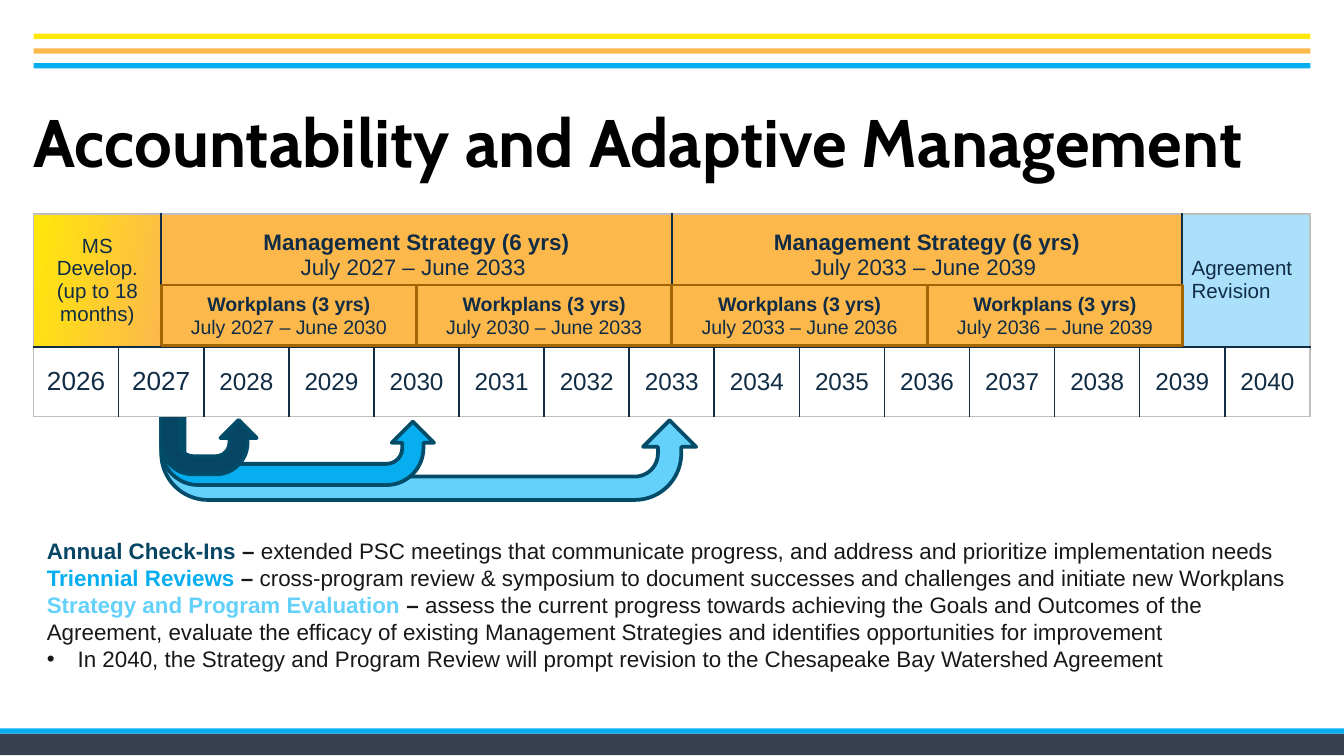
from lxml import etree
from pptx import Presentation
from pptx.dml.color import RGBColor
from pptx.enum.shapes import MSO_SHAPE
from pptx.enum.text import MSO_ANCHOR, PP_ALIGN
from pptx.oxml.ns import qn
from pptx.util import Inches, Pt

RECT, UTURN = MSO_SHAPE.RECTANGLE, MSO_SHAPE.U_TURN_ARROW
MIDDLE = MSO_ANCHOR.MIDDLE
LEFT, CENTER = PP_ALIGN.LEFT, PP_ALIGN.CENTER

HEX = {
    "yellow": "FFE809", "orange": "FDB84C", "blue": "06AEEF", "sky": "64D1FB",
    "pale": "AAE0FA", "deep": "064563", "edge": "034C69", "brown": "A36402",
    "navy": "112C45", "slate": "374151", "gray": "BFBFBF", "ink": "181818",
    "black": "000000", "white": "FFFFFF",
}

TITLE = "Accountability and Adaptive Management"
BARS = [
    (0, 5.46, 10, 0.16, "slate"), (0, 5.42, 10, 0.04, "blue"),
    (0.25, 0.25, 9.5, 0.04, "yellow"), (0.25, 0.36, 9.5, 0.04, "orange"),
    (0.25, 0.47, 9.5, 0.04, "blue"),
]
NOTES = [
    ("Annual Check-Ins", "deep", "extended PSC meetings that communicate progress, "
     "and address and prioritize implementation needs"),
    ("Triennial Reviews", "blue", "cross-program review & symposium to document "
     "successes and challenges and initiate new Workplans"),
    ("Strategy and Program Evaluation", "sky", "assess the current progress towards "
     "achieving the Goals and Outcomes of the Agreement, evaluate the efficacy of "
     "existing Management Strategies and identifies opportunities for improvement"),
]
BULLET = ("In 2040, the Strategy and Program Review will prompt revision "
          "to the Chesapeake Bay Watershed Agreement")
ARROWS = [
    (2.93, 3.98, 0.79, "sky", 0.22), (2.98, 2.03, 0.63, "blue", 0.25),
    (2.99, 0.71, 0.54, "deep", 0.25),
]
PHASES = [
    (0, 3, ["MS Develop.", "(up to 18 months)"], "yellow"),
    (3, 15, ["Management Strategy (6 yrs)", "July 2027 – June 2033 "], "orange"),
    (15, 27, ["Management Strategy (6 yrs)", "July 2033 – June 2039 "], "orange"),
    (27, 30, ["Agreement Revision"], "pale"),
]
YEARS = range(2026, 2041)
PLANS = range(2027, 2039, 3)
X, Y, WIDE = 0.25, 1.59, 9.5
ROWS = [0.99, 0.52]
HALF = WIDE / (2 * len(YEARS))
START = X + 3 * HALF


def rgb(name):
    return RGBColor.from_string(HEX[name])


def write(par, text, size, color, bold=False, face="Arial"):
    run = par.add_run()
    run.text = text
    font = run.font
    font.size, font.bold, font.name = Pt(size), bold, face
    font.color.rgb = rgb(color)


def lines(frame, items, size, align, bold=False):
    for i, text in enumerate(items):
        par = frame.add_paragraph() if i else frame.paragraphs[0]
        par.alignment = align
        write(par, text, size, "navy", bold and i == 0)


def shape(kind, x, y, w, h, fill=None, line=None, width=1):
    form = slide.shapes.add_shape(kind, Inches(x), Inches(y), Inches(w), Inches(h))
    form.shadow.inherit = False
    if fill:
        form.fill.solid()
        form.fill.fore_color.rgb = rgb(fill)
    else:
        form.fill.background()
    if line:
        form.line.color.rgb = rgb(line)
        form.line.width = Pt(width)
    else:
        form.line.fill.background()
    return form


def textbox(x, y, w, h):
    frame = slide.shapes.add_textbox(Inches(x), Inches(y), Inches(w), Inches(h)).text_frame
    frame.word_wrap = True
    return frame


def border(cell, sides):
    props = cell._tc.get_or_add_tcPr()
    for i, (side, color) in enumerate(zip("LRTB", sides)):
        line = etree.Element(qn("a:ln" + side), w=str(Pt(1)))
        solid = etree.SubElement(line, qn("a:solidFill"))
        etree.SubElement(solid, qn("a:srgbClr"), val=HEX[color])
        props.insert(i, line)


def fill_cell(row, start, end, items, color, size, align=CENTER, bold=False):
    first, last = edges.index(start), edges.index(end) - 1
    cell = grid.cell(row, first)
    if last > first:
        cell.merge(grid.cell(row, last))
    sides = ("navy" if start else "gray", "navy" if end < edges[-1] else "gray",
             "navy" if row else "gray", "gray" if row else "navy")
    for col in range(first, last + 1):
        part = grid.cell(row, col)
        part.fill.solid()
        part.fill.fore_color.rgb = rgb(color)
        border(part, sides)
    cell.vertical_anchor = MIDDLE
    cell.margin_left = cell.margin_right = Inches(0.07)
    cell.margin_top = cell.margin_bottom = Inches(0.04)
    lines(cell.text_frame, items, size, align, bold)
    return cell


deck = Presentation()
deck.slide_width = Inches(10)
deck.slide_height = deck.slide_width * 9 // 16
slide = deck.slides.add_slide(deck.slide_layouts[6])

for bar in BARS:
    shape(RECT, *bar)

head = textbox(0.25, 0.75, 9.5, 0.61)
head.margin_left = head.margin_right = head.margin_top = head.margin_bottom = 0
write(head.paragraphs[0], TITLE, 36, "black", True, "Cabin")

body = textbox(0.25, 3.95, 9.5, 1.11)
for i, (term, color, text) in enumerate(NOTES):
    par = body.add_paragraph() if i else body.paragraphs[0]
    write(par, term, 12, color, True)
    write(par, " – ", 12, "ink", True)
    write(par, text, 12, "ink")
par = body.add_paragraph()
props = par._p.get_or_add_pPr()
props.set("marL", str(Inches(0.23)))
props.set("indent", str(Inches(-0.23)))
etree.SubElement(props, qn("a:buFont"), typeface="Arial")
etree.SubElement(props, qn("a:buChar"), char="•")
write(par, BULLET, 12, "ink")

for top, w, h, color, stem in ARROWS:
    arrow = shape(UTURN, START, top, w, h, color, "edge", 2)
    arrow.adjustments[0] = stem
    arrow._element.spPr.find(qn("a:xfrm")).set("flipV", "1")

edges = sorted(set(range(0, 2 * len(YEARS) + 1, 2)) | {p[0] for p in PHASES})
grid = slide.shapes.add_table(len(ROWS), len(edges) - 1, Inches(X), Inches(Y),
                              Inches(WIDE), Inches(sum(ROWS))).table
grid.first_row = grid.horz_banding = False
for col, a, b in zip(grid.columns, edges, edges[1:]):
    col.width = Inches((b - a) * HALF)
for row, h in zip(grid.rows, ROWS):
    row.height = Inches(h)

for start, end, items, color in PHASES:
    major = color == "orange"
    cell = fill_cell(0, start, end, items, color, 12 if major else 11,
                     LEFT if color == "pale" else CENTER, major)
    if major:
        cell.margin_bottom = Inches(0.41)
    if color == "yellow":
        cell.fill.gradient()
        cell.fill.gradient_angle = 350
        for stop, tone in zip(cell.fill.gradient_stops, ("yellow", "orange")):
            stop.color.rgb = rgb(tone)
for i, year in enumerate(YEARS):
    fill_cell(1, 2 * i, 2 * i + 2, [str(year)], "white", 14 if i < 2 else 13)

for i, year in enumerate(PLANS):
    plan = shape(RECT, START + 6 * HALF * i, 2.12, 6 * HALF, 0.45, None, "brown", 1.5)
    plan.text_frame.word_wrap = True
    plan.text_frame.vertical_anchor = MIDDLE
    dates = f"July {year} – June {year + 3}"
    lines(plan.text_frame, ["Workplans (3 yrs)", dates], 10.5, CENTER, True)

deck.save("out.pptx")
